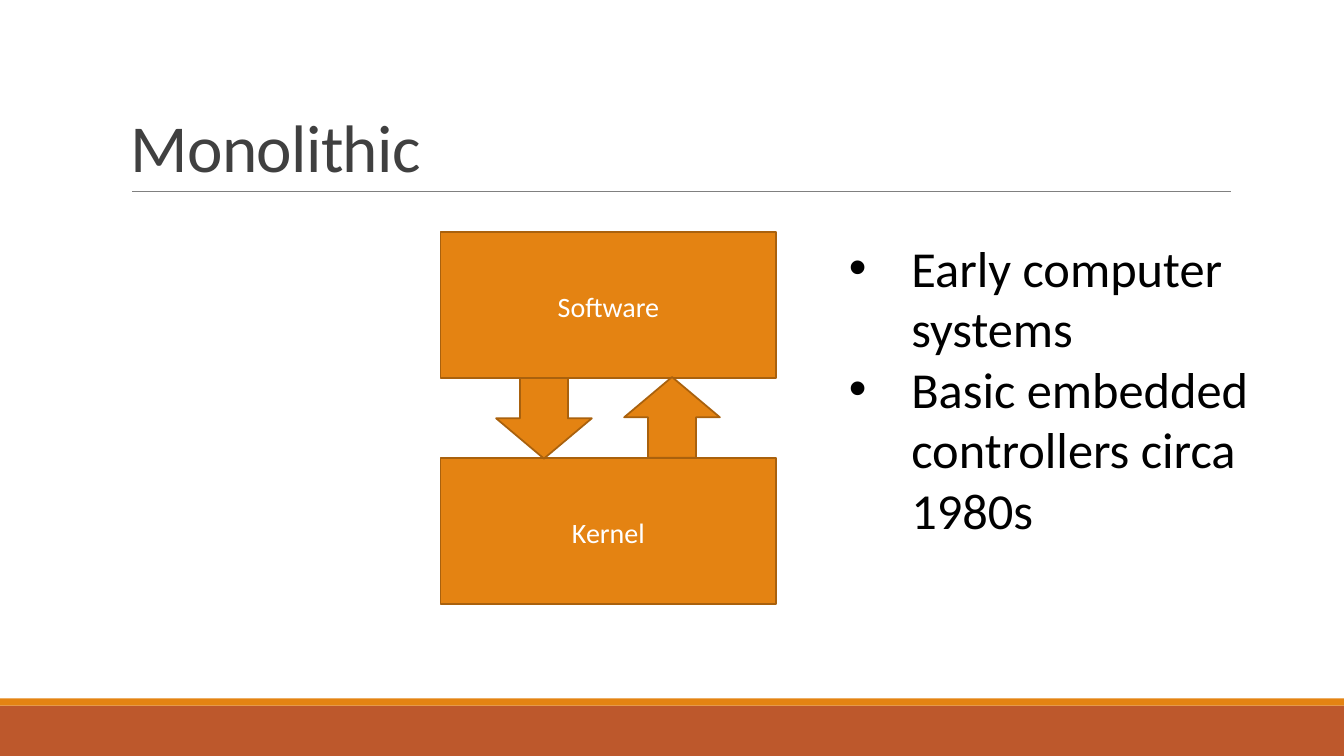
from lxml import etree
from pptx import Presentation
from pptx.dml.color import RGBColor
from pptx.enum.shapes import MSO_CONNECTOR, MSO_SHAPE
from pptx.enum.text import MSO_ANCHOR, PP_ALIGN
from pptx.oxml.ns import qn
from pptx.util import Inches, Pt

RECT, DOWN_ARROW = MSO_SHAPE.RECTANGLE, MSO_SHAPE.DOWN_ARROW
STRAIGHT = MSO_CONNECTOR.STRAIGHT
MIDDLE, BOTTOM = MSO_ANCHOR.MIDDLE, MSO_ANCHOR.BOTTOM
CENTER = PP_ALIGN.CENTER

FONT = "Calibri"
SLIDE_W, SLIDE_H = 13.33, 7.5
COLORS = {
    "band": "BD582C",
    "accent": "E48312",
    "outline": "A9610D",
    "rule": "808080",
    "title": "404040",
    "label": "FFFFFF",
    "body": "000000",
}


def color(name):
    return RGBColor.from_string(COLORS[name])


def add_run(paragraph, text, size, color_name):
    run = paragraph.add_run()
    run.text = text
    run.font.name = FONT
    run.font.size = Pt(size)
    run.font.color.rgb = color(color_name)
    return run


def add_block(slide, kind, box, fill, outline=None):
    block = slide.shapes.add_shape(kind, *map(Inches, box))
    block.shadow.inherit = False
    block.fill.solid()
    block.fill.fore_color.rgb = color(fill)
    if outline:
        block.line.color.rgb = color(outline)
        block.line.width = Pt(1.25)
    else:
        block.line.fill.background()
    return block


def add_footer(slide, left, top, width, height):
    stripe_h = 0.07
    add_block(slide, RECT, (left, top + stripe_h, width, height - stripe_h), "band")
    add_block(slide, RECT, (left, top, width, stripe_h), "accent")


def add_title(slide, left, top, width, height, text):
    # Rule under the heading
    bottom = top + height
    rule = slide.shapes.add_connector(
        STRAIGHT, Inches(left + 0.11), Inches(bottom), Inches(left + width + 0.01), Inches(bottom))
    rule.line.color.rgb = color("rule")
    rule.line.width = Pt(0.5)
    etree.SubElement(rule._element.spPr, qn("a:effectLst"))

    # Heading
    heading = slide.shapes.add_textbox(*map(Inches, (left, top, width, height))).text_frame
    heading.word_wrap = True
    heading.vertical_anchor = BOTTOM
    paragraph = heading.paragraphs[0]
    paragraph.line_spacing = 0.85
    run = add_run(paragraph, text, 48, "title")
    run.font._element.set("spc", "-50")


def add_layers(slide, left, top, width, height, labels):
    layer_h = 1.45
    gap = height - 2 * layer_h

    # Layers, from the top down
    for index, label in enumerate(labels):
        layer_top = top + index * (layer_h + gap)
        layer = add_block(slide, RECT, (left, layer_top, width, layer_h), "accent", "outline")
        layer.text_frame.word_wrap = True
        layer.text_frame.vertical_anchor = MIDDLE
        paragraph = layer.text_frame.paragraphs[0]
        paragraph.alignment = CENTER
        paragraph.line_spacing = 1.07
        paragraph.space_after = Pt(8)
        add_run(paragraph, label, 20, "label")

    # Calls go down, results come back up
    for offset, nudge, rotation in ((0.55, 0, 0), (1.82, -0.01, 180)):
        arrow_box = (left + offset, top + layer_h + nudge, 0.95, 0.8)
        arrow = add_block(slide, DOWN_ARROW, arrow_box, "accent", "outline")
        arrow.rotation = rotation


def add_bullets(slide, left, top, width, height, points):
    notes = slide.shapes.add_textbox(*map(Inches, (left, top, width, height))).text_frame
    notes.word_wrap = True
    indent = Inches(0.62)
    for index, point in enumerate(points):
        paragraph = notes.add_paragraph() if index else notes.paragraphs[0]
        add_run(paragraph, point, 36, "body")
        properties = paragraph._p.get_or_add_pPr()
        properties.set("marL", str(indent))
        properties.set("indent", str(-indent))
        etree.SubElement(properties, qn("a:buFont"), typeface="Arial")
        etree.SubElement(properties, qn("a:buChar"), char="•")


def main():
    deck = Presentation()
    deck.slide_width, deck.slide_height = Inches(SLIDE_W), Inches(SLIDE_H)
    slide = deck.slides.add_slide(deck.slide_layouts[6])

    add_footer(slide, 0, 6.93, SLIDE_W, SLIDE_H - 6.93)
    add_title(slide, 1.2, 0.31, 11, 1.59, "Monolithic")
    add_layers(slide, 4.37, 2.3, 3.33, 3.69, ["Software", "Kernel"])
    add_bullets(slide, 8.32, 2.3, 4.38, 3.13,
                ["Early computer systems", "Basic embedded controllers circa 1980s"])
    deck.save("out.pptx")


if __name__ == "__main__":
    main()
